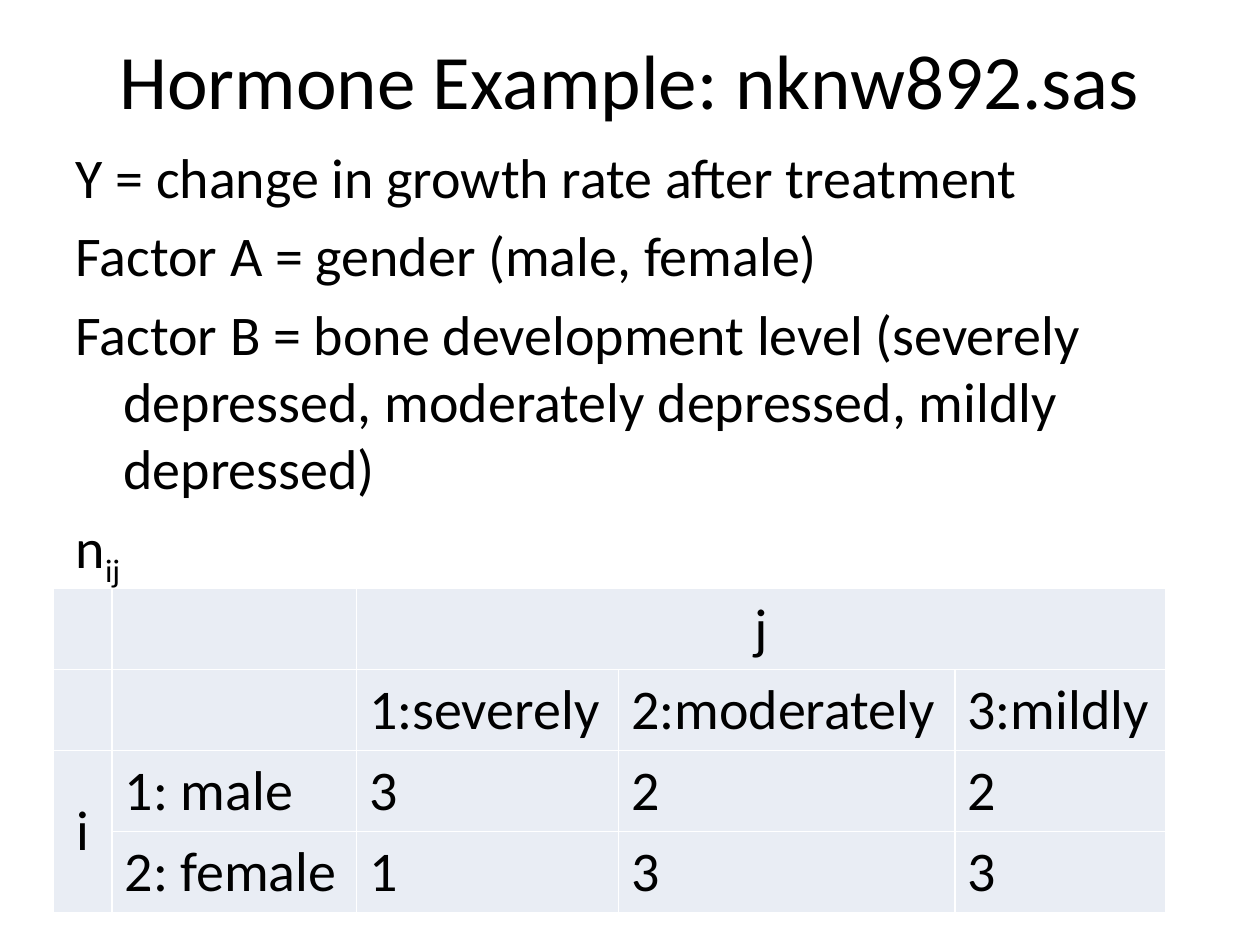
import pptx
import pptx.dml.color
import pptx.enum.text
import pptx.oxml
import pptx.oxml.ns
import pptx.util
from dataclasses import dataclass

Inches = pptx.util.Inches
Pt = pptx.util.Pt
RGBColor = pptx.dml.color.RGBColor
Align = pptx.enum.text.PP_ALIGN
Anchor = pptx.enum.text.MSO_ANCHOR
AutoSize = pptx.enum.text.MSO_AUTO_SIZE


@dataclass(frozen=True)
class Theme:
    font: str = "Calibri"
    title_size: int = 44
    body_size: int = 32
    text: str = "000000"
    cell: str = "E9EDF4"
    border: str = "FFFFFF"
    border_width: int = 1


THEME = Theme()

TITLE = "Hormone Example: nknw892.sas"
BODY = [
    [("Y = change in growth rate after treatment", False)],
    [("Factor A = gender (male, female)", False)],
    [("Factor B = bone development level (severely depressed, "
      "moderately depressed, mildly depressed)", False)],
    [("n", False), ("ij", True)],
]
COUNTS = [
    ["", "", "j", "", ""],
    ["", "", "1:severely", "2:moderately", "3:mildly"],
    ["i", "1: male", "3", "2", "2"],
    ["", "2: female", "1", "3", "3"],
]
MERGES = [((0, 2), (0, 4)), ((2, 0), (3, 0))]
COLUMN_WIDTHS = [0.47, 1.94, 2.08, 2.67, 1.67]
ROW_HEIGHT = 0.64
TITLE_BOX = (0.5, 0, 9, 1.25)
BODY_BOX = (0.5, 1.08, 9, 6.42)
TABLE_ORIGIN = (0.42, 4.67)
INDENT = 0.38


def place(shape, box):
    shape.left, shape.top, shape.width, shape.height = map(Inches, box)
    shape.text_frame.auto_size = AutoSize.NONE
    shape.text_frame.word_wrap = True


def add_run(paragraph, text, size, subscript=False):
    run = paragraph.add_run()
    run.text = text
    run.font.name = THEME.font
    run.font.size = Pt(size)
    run.font.bold = False
    run.font.color.rgb = RGBColor.from_string(THEME.text)
    if subscript:
        run.font._element.set("baseline", "-25000")


def hang_without_bullet(paragraph):
    properties = paragraph._p.get_or_add_pPr()
    properties.set("marL", str(Inches(INDENT)))
    properties.set("indent", str(-Inches(INDENT)))
    properties.append(pptx.oxml.parse_xml(
        f'<a:buNone {pptx.oxml.ns.nsdecls("a")}/>'))


def style_cell(cell):
    properties = cell._tc.get_or_add_tcPr()
    for side in ("lnL", "lnR", "lnT", "lnB"):
        properties.append(pptx.oxml.parse_xml(
            f'<a:{side} {pptx.oxml.ns.nsdecls("a")} w="{Pt(THEME.border_width)}">'
            f'<a:solidFill><a:srgbClr val="{THEME.border}"/></a:solidFill></a:{side}>'))
    cell.fill.solid()
    cell.fill.fore_color.rgb = RGBColor.from_string(THEME.cell)


def add_title(slide):
    title = slide.shapes.title
    place(title, TITLE_BOX)
    title.text_frame.vertical_anchor = Anchor.MIDDLE
    paragraph = title.text_frame.paragraphs[0]
    paragraph.alignment = Align.CENTER
    add_run(paragraph, TITLE, THEME.title_size)


def add_body(slide):
    body = slide.placeholders[1]
    place(body, BODY_BOX)
    frame = body.text_frame
    for index, runs in enumerate(BODY):
        paragraph = frame.add_paragraph() if index else frame.paragraphs[0]
        paragraph.space_before = Pt(THEME.body_size * 0.2)
        hang_without_bullet(paragraph)
        for text, subscript in runs:
            add_run(paragraph, text, THEME.body_size, subscript)


def add_counts(slide):
    left, top = TABLE_ORIGIN
    table = slide.shapes.add_table(
        len(COUNTS), len(COLUMN_WIDTHS), Inches(left), Inches(top),
        Inches(sum(COLUMN_WIDTHS)), Inches(ROW_HEIGHT * len(COUNTS))).table
    table.first_row = table.horz_banding = False
    for column, width in zip(table.columns, COLUMN_WIDTHS):
        column.width = Inches(width)
    for row, texts in zip(table.rows, COUNTS):
        row.height = Inches(ROW_HEIGHT)
        for cell, text in zip(row.cells, texts):
            style_cell(cell)
            if text:
                add_run(cell.text_frame.paragraphs[0], text, THEME.body_size)
    for first, last in MERGES:
        heading = table.cell(*first)
        heading.merge(table.cell(*last))
        heading.vertical_anchor = Anchor.MIDDLE
        heading.text_frame.paragraphs[0].alignment = Align.CENTER


def main():
    presentation = pptx.Presentation()
    presentation.slide_width = Inches(10)
    presentation.slide_height = Inches(7.5)
    slide = presentation.slides.add_slide(presentation.slide_layouts[1])
    add_title(slide)
    add_body(slide)
    add_counts(slide)
    presentation.save("out.pptx")


if __name__ == "__main__":
    main()
